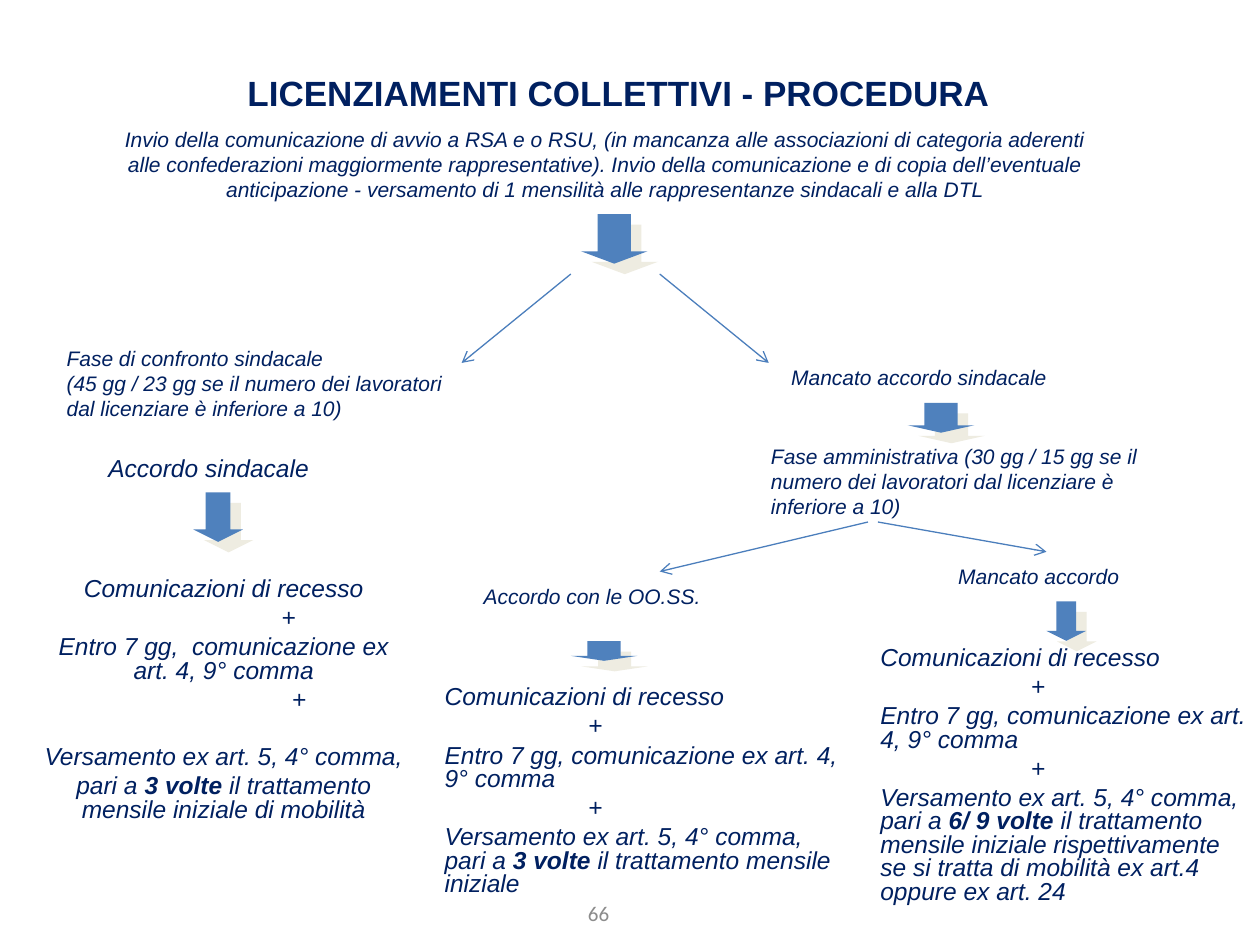
from dataclasses import dataclass

from lxml.etree import SubElement
from pptx import Presentation
from pptx.dml.color import RGBColor
from pptx.enum.shapes import MSO_CONNECTOR as CONN, MSO_SHAPE as SHAPE
from pptx.enum.text import MSO_ANCHOR as ANCHOR, PP_ALIGN as ALIGN
from pptx.oxml.ns import qn
from pptx.util import Pt

COLORS = {
    "navy": "002060",
    "blue": "4F81BD",
    "line": "4B7EBC",
    "shadow": "EEECE1",
    "gray": "8C8C8C",
}
BOLD_MARK = "*"


@dataclass
class Para:
    text: str
    indent: float = 0
    before: float | None = None


@dataclass
class TextBlock:
    x: float
    y: float
    w: float
    h: float
    paras: list[Para]
    size: float = 12
    align: ALIGN = ALIGN.LEFT
    font: str = "Arial"
    color: str = "navy"
    italic: bool = True
    spacing: float = 0.8
    anchor: ANCHOR = ANCHOR.TOP


@dataclass
class DownArrow:
    x: float
    y: float
    w: float
    h: float


@dataclass
class Branch:
    x1: float
    y1: float
    x2: float
    y2: float


def rgb(name: str) -> RGBColor:
    return RGBColor.from_string(COLORS[name])


def lines(*texts: str) -> list[Para]:
    return [Para(t) for t in texts]


def outcome(payment: str, indent: float) -> list[Para]:
    plus = Para("+", indent)
    return [
        Para("Comunicazioni di recesso"),
        plus,
        Para("Entro 7 gg, comunicazione ex art. 4, 9° comma"),
        plus,
        Para("Versamento ex art. 5, 4° comma, pari a " + payment),
    ]


def draw_text(s, block: TextBlock) -> None:
    sp = s.shapes.add_textbox(Pt(block.x), Pt(block.y), Pt(block.w), Pt(block.h))
    tf = sp.text_frame
    tf.word_wrap = True
    tf.vertical_anchor = block.anchor
    for i, para in enumerate(block.paras):
        p = tf.add_paragraph() if i else tf.paragraphs[0]
        p.alignment = block.align
        p.line_spacing = block.spacing
        gap = round(block.size * 0.23, 1)
        p.space_before = Pt(gap if para.before is None else para.before)
        if para.indent:
            p._p.get_or_add_pPr().set("marL", str(Pt(para.indent)))
        for j, part in enumerate(para.text.split(BOLD_MARK)):
            if not part:
                continue
            r = p.add_run()
            r.text = part
            r.font.name = block.font
            r.font.size = Pt(block.size)
            r.font.italic = block.italic
            r.font.bold = j % 2 == 1
            r.font.color.rgb = rgb(block.color)


def draw_arrow(s, arrow: DownArrow) -> None:
    sp = s.shapes.add_shape(
        SHAPE.DOWN_ARROW, Pt(arrow.x), Pt(arrow.y), Pt(arrow.w), Pt(arrow.h)
    )
    sp.adjustments[0] = 0.5
    sp.adjustments[1] = 0.25
    sp.fill.solid()
    sp.fill.fore_color.rgb = rgb("blue")
    sp.line.fill.background()
    sp.shadow.inherit = False
    effects = sp._element.spPr.find(qn("a:effectLst"))
    shadow = SubElement(
        effects, qn("a:outerShdw"), dist=str(Pt(8.5)), dir="2700000", rotWithShape="0"
    )
    SubElement(shadow, qn("a:srgbClr"), val=COLORS["shadow"])


def draw_branch(s, branch: Branch) -> None:
    c = s.shapes.add_connector(
        CONN.STRAIGHT, Pt(branch.x1), Pt(branch.y1), Pt(branch.x2), Pt(branch.y2)
    )
    c.line.color.rgb = rgb("line")
    c.line.width = Pt(0.75)
    SubElement(c.line._get_or_add_ln(), qn("a:tailEnd"), type="arrow")
    SubElement(c._element.spPr, qn("a:effectLst"))


TEXTS = [
    TextBlock(-3, 37.5, 648, 67.5, [Para("*LICENZIAMENTI COLLETTIVI - PROCEDURA*", 65)],
              size=20, align=ALIGN.CENTER, italic=False, spacing=1),
    TextBlock(42.5, 71.3, 607, 51, lines(
        "Invio della comunicazione di avvio a RSA e o RSU, (in mancanza alle associazioni di categoria aderenti",
        "alle confederazioni maggiormente rappresentative). Invio della comunicazione e di copia dell’eventuale",
        "anticipazione - versamento di 1 mensilità alle rappresentanze sindacali e alla DTL",
    ), align=ALIGN.CENTER),
    TextBlock(31, 196.5, 648, 45, lines(
        "Fase di confronto sindacale",
        "(45 gg / 23 gg se il numero dei lavoratori",
        "dal licenziare è inferiore a 10)",
    )),
    TextBlock(3, 258.5, 232.5, 22, lines("Accordo sindacale"), size=14, align=ALIGN.CENTER),
    TextBlock(14.4, 327, 227, 199, [
        Para("Comunicazioni di recesso"),
        Para("+", 74),
        Para("Entro 7 gg,  comunicazione ex art. 4, 9° comma"),
        Para("+", 86),
        Para("Versamento ex art. 5, 4° comma,", before=19.3),
        Para("pari a *3 volte* il trattamento mensile iniziale di mobilità"),
    ], size=14, align=ALIGN.CENTER),
    TextBlock(445, 207.5, 294.5, 45, lines("Mancato accordo sindacale")),
    TextBlock(433.5, 252.7, 238, 45, lines(
        "Fase amministrativa (30 gg / 15 gg se il",
        "numero dei lavoratori dal licenziare è",
        "inferiore a 10)",
    )),
    TextBlock(269.3, 332.5, 215, 17.5, lines("Accordo con le OO.SS.")),
    TextBlock(247, 389, 244, 151,
              outcome("*3 volte* il trattamento mensile iniziale", 82), size=14),
    TextBlock(507.5, 321, 206.5, 22, [Para("Mancato accordo", 33)]),
    TextBlock(496, 366.5, 224, 244, outcome(
        "*6/ 9 volte* il trattamento mensile iniziale rispettivamente "
        "se si tratta di mobilità ex art.4 oppure ex art. 24", 86), size=14),
    TextBlock(258, 507.5, 168, 29, lines("66"), align=ALIGN.CENTER, font="Calibri",
              color="gray", italic=False, spacing=1, anchor=ANCHOR.MIDDLE),
]

ARROWS = [
    DownArrow(332, 122.4, 38, 28.3),
    DownArrow(110.5, 281.4, 28.3, 28.3),
    DownArrow(518.7, 230.3, 38, 17),
    DownArrow(326.2, 366.3, 38, 11.3),
    DownArrow(598, 343.6, 22.6, 22.6),
]

BRANCHES = [
    Branch(496, 298.3, 377, 326.6),
    Branch(501.7, 298.3, 598, 315.3),
    Branch(326.2, 156.6, 263.8, 207.4),
    Branch(377, 156.6, 439.3, 207.4),
]


def main() -> None:
    prs = Presentation()
    prs.slide_width, prs.slide_height = Pt(720), Pt(540)
    s = prs.slides.add_slide(prs.slide_layouts[6])
    for arrow in ARROWS:
        draw_arrow(s, arrow)
    for block in TEXTS:
        draw_text(s, block)
    for branch in BRANCHES:
        draw_branch(s, branch)
    prs.save("out.pptx")


if __name__ == "__main__":
    main()
